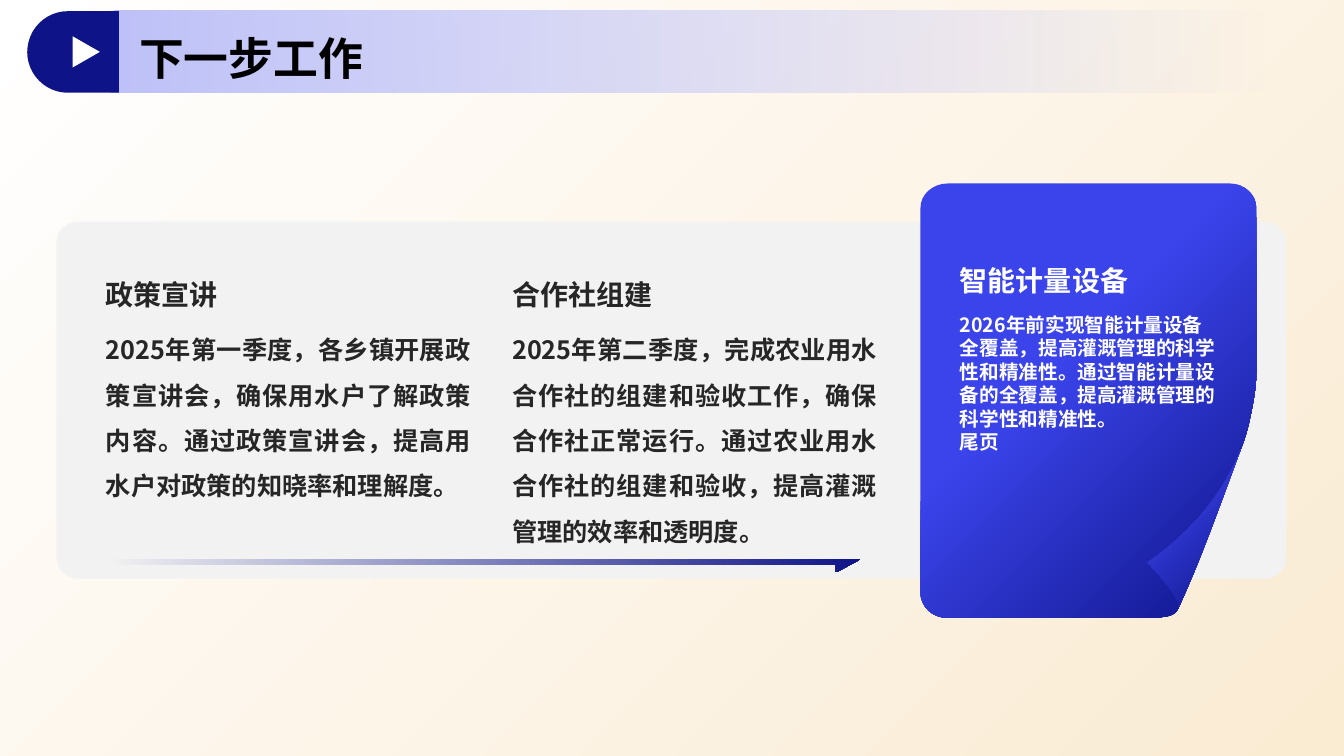
from dataclasses import dataclass

from lxml import etree
from pptx import Presentation
from pptx import util as u
from pptx.dml.color import RGBColor
from pptx.enum import shapes, text
from pptx.oxml.ns import qn

Inches = u.Inches
KIND = shapes.MSO_SHAPE
ALIGN = text.PP_ALIGN
ANCHOR = text.MSO_ANCHOR


@dataclass(frozen=True)
class Theme:
    """Colours and type sizes of the slide."""
    font: str = "Noto Sans CJK SC"
    white: str = "FFFFFF"
    black: str = "000000"
    ink: str = "262626"
    cream: str = "FAEBD3"
    panel: str = "F2F2F2"
    navy: str = "0E1488"
    blue: str = "3B44EB"
    pale: str = "BEC1F8"
    title: int = 32
    head: int = 20
    body: int = 18
    small: int = 14


T = Theme()
STEPS = [
    ("政策宣讲", "2025年第一季度，各乡镇开展政策宣讲会，确保用水户了解政策内容。"
     "通过政策宣讲会，提高用水户对政策的知晓率和理解度。"),
    ("合作社组建", "2025年第二季度，完成农业用水合作社的组建和验收工作，确保合作社正常运行。"
     "通过农业用水合作社的组建和验收，提高灌溉管理的效率和透明度。"),
]
GOAL = ("智能计量设备", "2026年前实现智能计量设备全覆盖，提高灌溉管理的科学性和精准性。"
        "通过智能计量设备的全覆盖，提高灌溉管理的科学性和精准性。\v尾页")


def paint(shape, *stops, angle=0):
    """Fill with one colour, or with two (position, colour) stops."""
    shape.shadow.inherit = False
    shape.line.fill.background()
    if len(stops) == 1:
        shape.fill.solid()
        shape.fill.fore_color.rgb = RGBColor.from_string(stops[0])
        return shape
    shape.fill.gradient()
    shape.fill.gradient_angle = angle
    for stop, (place, hue) in zip(shape.fill.gradient_stops, stops):
        stop.position = place
        stop.color.rgb = RGBColor.from_string(hue)
    return shape


def block(slide, kind, x, y, w, h):
    """Add a preset shape, in inches."""
    return slide.shapes.add_shape(kind, Inches(x), Inches(y), Inches(w), Inches(h))


def outline(slide, x, y, start, steps):
    """Add a closed outline of lines (one point) and curves (three points)."""
    pen = slide.shapes.build_freeform(Inches(x + start[0]), Inches(y + start[1]))
    pen.add_line_segments([(Inches(x + a), Inches(y + b)) for step in steps for a, b in step])
    shape = pen.convert_to_shape()
    lines = iter(shape._element.findall(".//" + qn("a:lnTo")))
    for step in steps:
        group = [next(lines) for _ in step]
        if len(group) == 3:
            curve = etree.Element(qn("a:cubicBezTo"))
            group[0].addprevious(curve)
            for line in group:
                curve.append(line[0])
                line.getparent().remove(line)
    return shape


def write(slide, words, x, y, w, h, size, hue, gap, anchor=ANCHOR.TOP, align=ALIGN.JUSTIFY):
    """Add a bold text box without margins."""
    frame = slide.shapes.add_textbox(Inches(x), Inches(y), Inches(w), Inches(h)).text_frame
    frame.word_wrap = True
    frame.vertical_anchor = anchor
    frame.margin_left = frame.margin_right = frame.margin_top = frame.margin_bottom = 0
    frame.text = words
    para = frame.paragraphs[0]
    para.alignment, para.line_spacing = align, gap
    font = para.font
    font.name, font.size, font.bold = T.font, u.Pt(size), True
    font.color.rgb = RGBColor.from_string(hue)
    east = etree.SubElement(para._p.pPr.find(qn("a:defRPr")), qn("a:ea"))
    east.set("typeface", T.font)


def header(slide, x, y, w, h, title):
    """Draw the title bar with its rounded play tab."""
    bar = block(slide, KIND.ROUNDED_RECTANGLE, x + 0.73, y, w - 0.73, h)
    paint(bar, (0, T.pale), (1, T.pale))
    clear = bar.fill._xPr.findall(".//" + qn("a:srgbClr"))[-1]
    etree.SubElement(clear, qn("a:alpha")).set("val", "0")
    write(slide, title, x + 1.11, y + 0.16, 8.51, 0.54, T.title, T.black, 1.1, ANCHOR.MIDDLE)
    tab = paint(block(slide, KIND.ROUND_2_SAME_RECTANGLE, x + 0.05, y - 0.05, h, 0.91), T.navy)
    tab.adjustments[0] = 0.5
    tab.rotation = 270
    play = paint(block(slide, KIND.ISOSCELES_TRIANGLE, x + 0.43, y + 0.27, 0.31, 0.27), T.white)
    play.rotation = 90


def panel(slide, x, y, w, h):
    """Draw the grey panel, its steps and the arrow below them."""
    base = paint(block(slide, KIND.ROUNDED_RECTANGLE, x, y, w, h), T.panel)
    base.adjustments[0] = 0.06
    arrow = outline(slide, x + 0.48, y + 3.35, (7.49, 0),
                    [[(0, 0)], [(0, 0.05)], [(7.25, 0.05)], [(7.25, 0.13)]])
    paint(arrow, (0, T.panel), (1, T.navy))
    for i, (head, body) in enumerate(STEPS):
        left = x + 0.49 + 4.03 * i
        write(slide, head, left, y + 0.29, 3.62, 0.6, T.head, T.ink, 1.3, ANCHOR.BOTTOM)
        write(slide, body, left, y + 0.97, 3.62, 1.7, T.body, T.ink, 1.5)


def card(slide, x, y, w, h):
    """Draw the blue page with a curled corner and its text."""
    page = outline(slide, x, y, (2.45, 3.61), [
        [(2.34, 3.69), (2.33, 3.84), (2.41, 3.94)],
        [(2.5, 4.04), (2.58, 4.16), (2.56, 4.21)],
        [(2.51, h), (2.44, h), (1.99, h)],
        [(0.27, h)],
        [(0.12, h), (0, 4.2), (0, 4.06)],
        [(0, 0.24)],
        [(0, 0.11), (0.12, 0), (0.27, 0)],
        [(w - 0.26, 0)],
        [(w - 0.12, 0), (w, 0.11), (w, 0.24)],
        [(w, 0.63), (w + 0.01, 1.43), (w, 1.89)],
        [(w, 2.06), (3.28, 2.27), (3.26, 2.37)],
        [(3.12, 2.98), (2.7, 3.4), (2.45, 3.61)],
    ])
    paint(page, (0.4, T.blue), (1, T.navy), angle=315)
    head, body = GOAL
    write(slide, body, x + 0.39, y + 1.28, 2.56, 1.67, T.small, T.white, 1.0, align=ALIGN.LEFT)
    write(slide, head, x + 0.39, y + 0.16, 2.56, 0.97, T.head, T.white, 1.3, ANCHOR.BOTTOM)
    curl = outline(slide, x, y, (2.25, 3.76), [
        [(2.25, 3.76), (2.6, 4.11), (2.56, 4.21)],
        [(2.76, 3.77), (2.9, 3.39), (3.18, 2.63)],
        [(2.9, 3.36), (2.25, 3.76), (2.25, 3.76)],
    ])
    paint(curl, (0.2, T.blue), (1, T.navy), angle=315)


def main():
    """Build and save the slide."""
    deck = Presentation()
    deck.slide_width, deck.slide_height = Inches(13.33), Inches(7.5)
    slide = deck.slides.add_slide(deck.slide_layouts[6])
    back = block(slide, KIND.RECTANGLE, 0, 0, 13.33, 7.5)
    paint(back, (0, T.white), (1, T.cream), angle=315)
    panel(slide, 0.56, 2.2, 12.2, 3.54)
    card(slide, 9.13, 1.82, 3.33, 4.31)
    header(slide, 0.27, 0.11, 12.33, 0.81, "下一步工作")
    deck.save("out.pptx")


if __name__ == "__main__":
    main()
